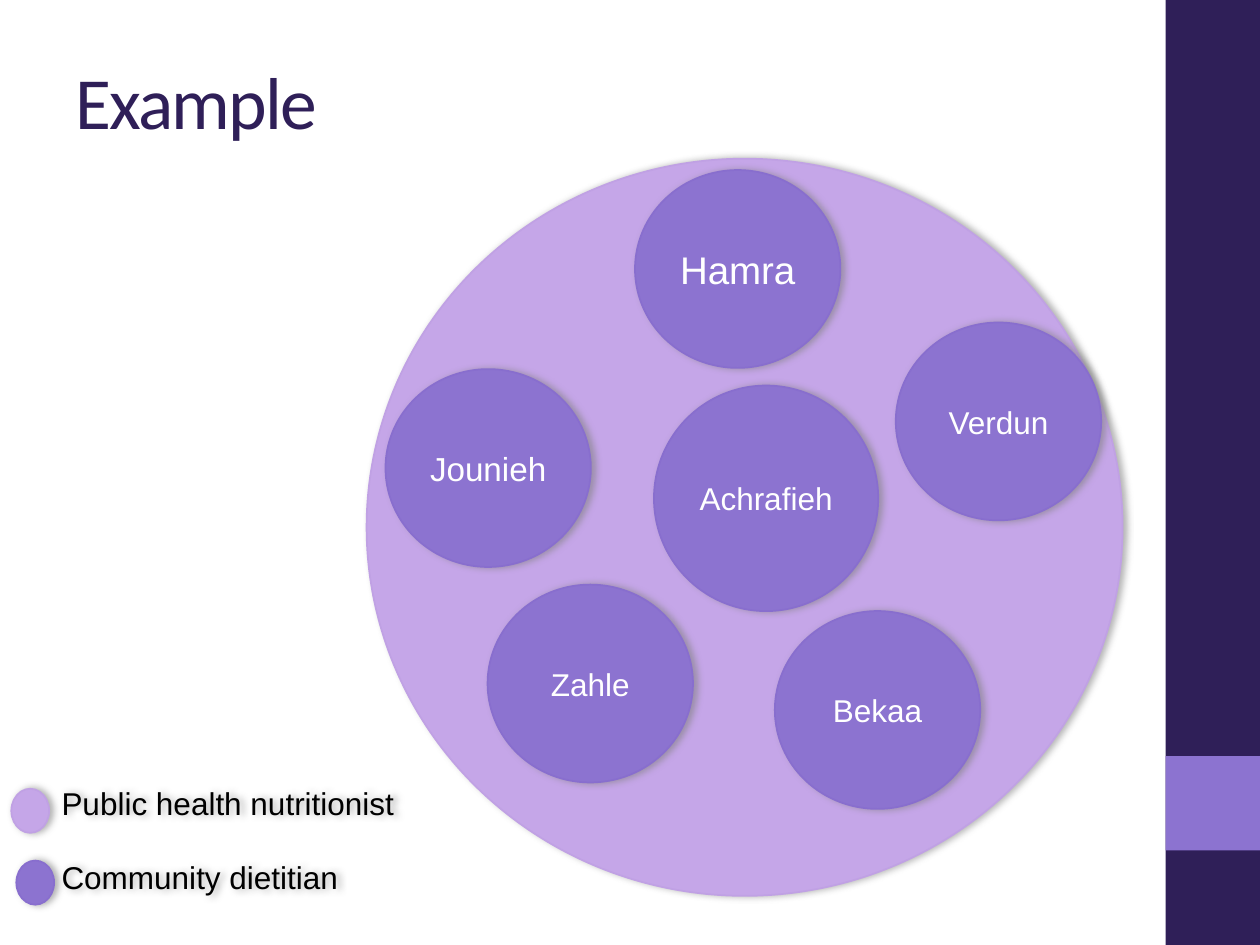
from dataclasses import dataclass

import pptx
import pptx.dml.color
import pptx.enum.shapes
import pptx.enum.text
import pptx.oxml
import pptx.oxml.ns
import pptx.util
from pptx.util import Inches

RGB = pptx.dml.color.RGBColor.from_string
SHAPES = pptx.enum.shapes.MSO_SHAPE
ALIGN = pptx.enum.text.PP_ALIGN
MIDDLE = pptx.enum.text.MSO_ANCHOR.MIDDLE


@dataclass(frozen=True)
class Theme:
    dark: str = "2F1F58"
    nutritionist: tuple = ("C5A6E8", "C0A1E4")  # fill, outline
    dietitian: tuple = ("8C73D0", "886ECE")
    white: str = "FFFFFF"
    black: str = "000000"
    shadow: str = "808080"
    heading_font: str = "Calibri"
    body_font: str = "Arial"
    title_size: int = 42
    body_size: int = 18


THEME = Theme()


def add_shadow(shape):
    """Soft grey shadow falling to the right."""
    shape.shadow.inherit = False
    effects = shape._element.spPr.find(pptx.oxml.ns.qn("a:effectLst"))
    effects.append(pptx.oxml.parse_xml(
        f'<a:outerShdw {pptx.oxml.ns.nsdecls("a")} blurRad="{pptx.util.Pt(4)}" '
        f'dist="{pptx.util.Pt(2)}" dir="0" rotWithShape="0">'
        f'<a:srgbClr val="{THEME.shadow}"><a:alpha val="60000"/></a:srgbClr>'
        '</a:outerShdw>'))


def write(shape, text, size, color, font=THEME.body_font, align=ALIGN.LEFT, wrap=True):
    frame = shape.text_frame
    frame.text = text
    frame.word_wrap = wrap
    frame.vertical_anchor = MIDDLE
    paragraph = frame.paragraphs[0]
    paragraph.alignment = align
    run = paragraph.runs[0]
    run.font.size = pptx.util.Pt(size)
    run.font.name = font
    run.font.color.rgb = RGB(color)
    return run


def add_circle(slide, left, top, width, height, colors):
    fill, outline = colors
    circle = slide.shapes.add_shape(SHAPES.OVAL, left, top, width, height)
    circle.fill.solid()
    circle.fill.fore_color.rgb = RGB(fill)
    circle.line.color.rgb = RGB(outline)
    circle.line.width = pptx.util.Pt(1)
    add_shadow(circle)
    return circle


def add_sidebar(slide, left, top, width, height):
    accent_top = top + height - 2 * width
    for band_top, band_height, color in ((top, height, THEME.dark),
                                         (accent_top, width, THEME.dietitian[0])):
        band = slide.shapes.add_shape(SHAPES.RECTANGLE, left, band_top, width, band_height)
        band.fill.solid()
        band.fill.fore_color.rgb = RGB(color)
        band.line.fill.background()
        band.shadow.inherit = False


def add_title(slide, left, top, width, height):
    title = slide.shapes.add_textbox(left, top, width, height)
    run = write(title, "Example", THEME.title_size, THEME.dark, THEME.heading_font)
    run.font._element.set("spc", "-100")


def add_region_map(slide, left, top, width, height):
    """One nutritionist's area holding the dietitians' districts."""
    add_circle(slide, left, top, width, height, THEME.nutritionist)
    outer, center = (1.63, 1.57), (1.78, 1.79)
    districts = (
        ("Achrafieh", 2.28, 1.8, center, THEME.body_size),
        ("Verdun", 4.2, 1.3, outer, THEME.body_size),
        ("Zahle", 0.96, 3.38, outer, THEME.body_size),
        ("Jounieh", 0.15, 1.67, outer, 19),
        ("Hamra", 2.13, 0.09, outer, 22),
        ("Bekaa", 3.24, 3.59, outer, THEME.body_size),
    )
    for name, dx, dy, (district_width, district_height), size in districts:
        district = add_circle(slide, left + Inches(dx), top + Inches(dy),
                              Inches(district_width), Inches(district_height),
                              THEME.dietitian)
        write(district, name, size, THEME.white, align=ALIGN.CENTER, wrap=False)


def add_legend(slide, left, top, width, height):
    row_height = Inches(0.48)
    entries = (
        ("Public health nutritionist", THEME.nutritionist, 0, 0.13),
        ("Community dietitian", THEME.dietitian, 0.04, 0.11),
    )
    for row, (role, colors, dx, dy) in enumerate(entries):
        row_top = top + row * (height - row_height)
        add_circle(slide, left + Inches(dx), row_top + Inches(dy),
                   Inches(0.3), Inches(0.35), colors)
        label = slide.shapes.add_textbox(left + Inches(0.3), row_top,
                                         width - Inches(0.3), row_height)
        write(label, role, THEME.body_size, THEME.black)
        add_shadow(label)


def main():
    deck = pptx.Presentation()
    deck.slide_width, deck.slide_height = Inches(10), Inches(7.5)
    slide = deck.slides.add_slide(deck.slide_layouts[6])
    add_sidebar(slide, Inches(9.25), 0, Inches(0.75), deck.slide_height)
    add_title(slide, Inches(0.5), Inches(0.17), Inches(9.11), Inches(1.25))
    add_region_map(slide, Inches(2.91), Inches(1.26), Inches(6), Inches(5.85))
    add_legend(slide, Inches(0.09), Inches(6.13), Inches(3.3), Inches(1.07))
    deck.save("out.pptx")


if __name__ == "__main__":
    main()
